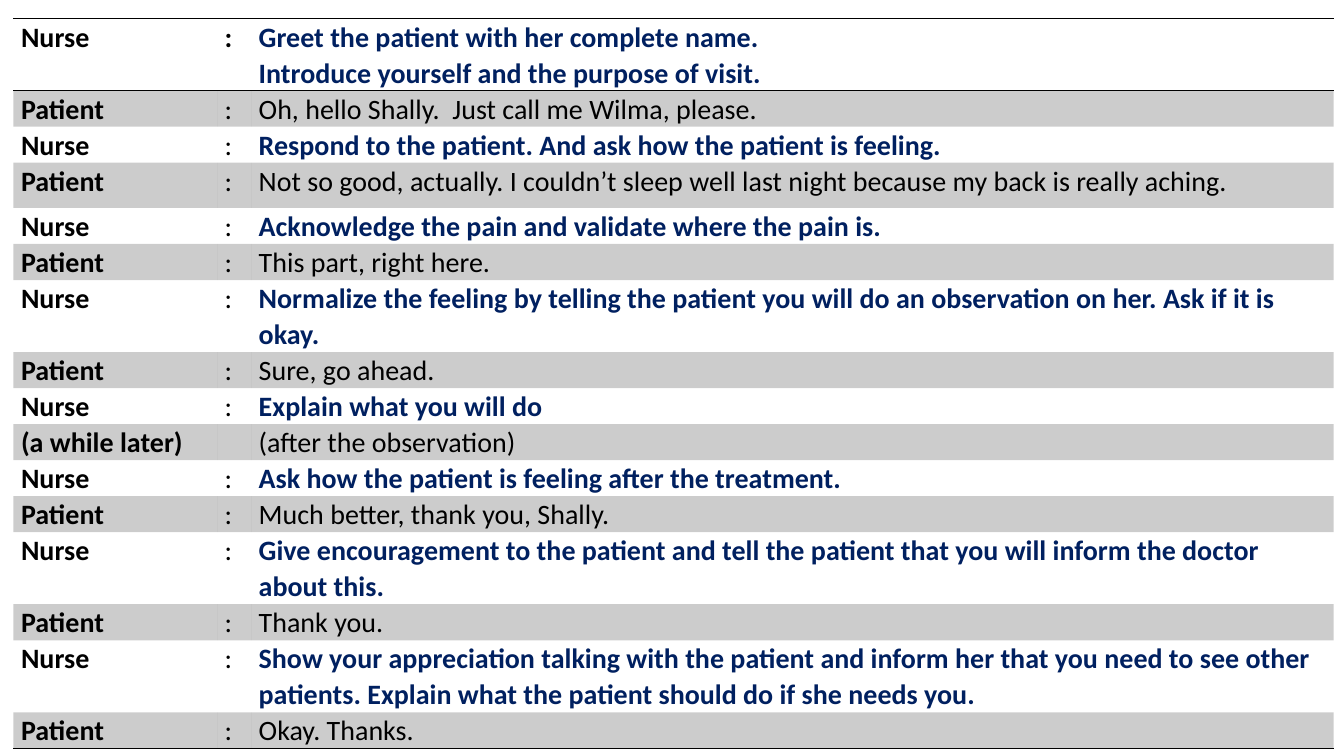
from lxml.etree import SubElement
from pptx import Presentation
from pptx.dml.color import RGBColor
from pptx.enum.text import MSO_ANCHOR as Anchor
from pptx.oxml.ns import qn
from pptx.util import Cm, Pt

BLACK = RGBColor(0, 0, 0)
NAVY = RGBColor(0x00, 0x20, 0x60)
PLAIN = "{2D5ABB26-0587-4C30-8999-92F81FD0307C}"

LINES = [
    ("Nurse", "Greet the patient with her complete name.\n"
              "Introduce yourself and the purpose of visit.", 1.5),
    ("Patient", "Oh, hello Shally.  Just call me Wilma, please.", 0.74),
    ("Nurse", "Respond to the patient. And ask how the patient is feeling.", 0.74),
    ("Patient", "Not so good, actually. I couldn’t sleep well last night "
                "because my back is really aching.", 1.14),
    ("Nurse", "Acknowledge the pain and validate where the pain is.", 0.74),
    ("Patient", "This part, right here.", 0.74),
    ("Nurse", "Normalize the feeling by telling the patient you will do an "
              "observation on her. Ask if it is okay.", 1.17),
    ("Patient", "Sure, go ahead.", 0.74),
    ("Nurse", "Explain what you will do", 0.74),
    ("(a while later)", "(after the observation)", 0.74),
    ("Nurse", "Ask how the patient is feeling after the treatment.", 0.74),
    ("Patient", "Much better, thank you, Shally.", 0.74),
    ("Nurse", "Give encouragement to the patient and tell the patient that "
              "you will inform the doctor about this.", 1.5),
    ("Patient", "Thank you.", 0.74),
    ("Nurse", "Show your appreciation talking with the patient and inform her "
              "that you need to see other patients. Explain what the patient "
              "should do if she needs you.", 1.5),
    ("Patient", "Okay. Thanks.", 0.74),
]


def write(cell, text, bold=False, color=BLACK):
    cell.margin_left = cell.margin_right = Cm(0.19)
    cell.margin_top = cell.margin_bottom = 0
    cell.vertical_anchor = Anchor.TOP
    cell.text = text
    for para in cell.text_frame.paragraphs:
        para.line_spacing = 1.05
        para.space_before = para.space_after = Pt(0)
        para.font.size = Pt(20)
        for run in para.runs:
            font = run.font
            font.name = "Calibri"
            font.size = Pt(20)
            font.bold = bold
            font.color.rgb = color


def rule(cell, side):
    line = SubElement(cell._tc.get_or_add_tcPr(), qn("a:" + side), w=str(Pt(1)))
    fill = SubElement(line, qn("a:solidFill"))
    SubElement(fill, qn("a:srgbClr"), val=str(BLACK))


deck = Presentation()
deck.slide_width = Cm(33.87)
deck.slide_height = Cm(19.05)
slide = deck.slides.add_slide(deck.slide_layouts[6])

frame = slide.shapes.add_table(
    len(LINES), 3, Cm(0.34), Cm(0.47), Cm(33.27), Cm(17.75))
table = frame.table
table.first_row = table.horz_banding = False
table._tbl.tblPr.find(qn("a:tableStyleId")).text = PLAIN
for col, width in zip(table.columns, (5.13, 0.86, 27.28)):
    col.width = Cm(width)

last = len(LINES) - 1
for num, (who, words, height) in enumerate(LINES):
    row = table.rows[num]
    row.height = Cm(height)
    name, mark, speech = row.cells
    nurse = who == "Nurse"
    write(name, who, bold=True)
    write(mark, "" if who.startswith("(") else ":", bold=num == 0)
    write(speech, words, bold=nurse, color=NAVY if nurse else BLACK)
    for cell in row.cells:
        if num == 0:
            rule(cell, "lnT")
        if num in (0, last):
            rule(cell, "lnB")
        if nurse:
            cell.fill.background()
        else:
            cell.fill.solid()
            cell.fill.fore_color.rgb = BLACK
            shade = cell._tc.tcPr.find(qn("a:solidFill"))[0]
            SubElement(shade, qn("a:alpha"), val="20000")

deck.save("out.pptx")
